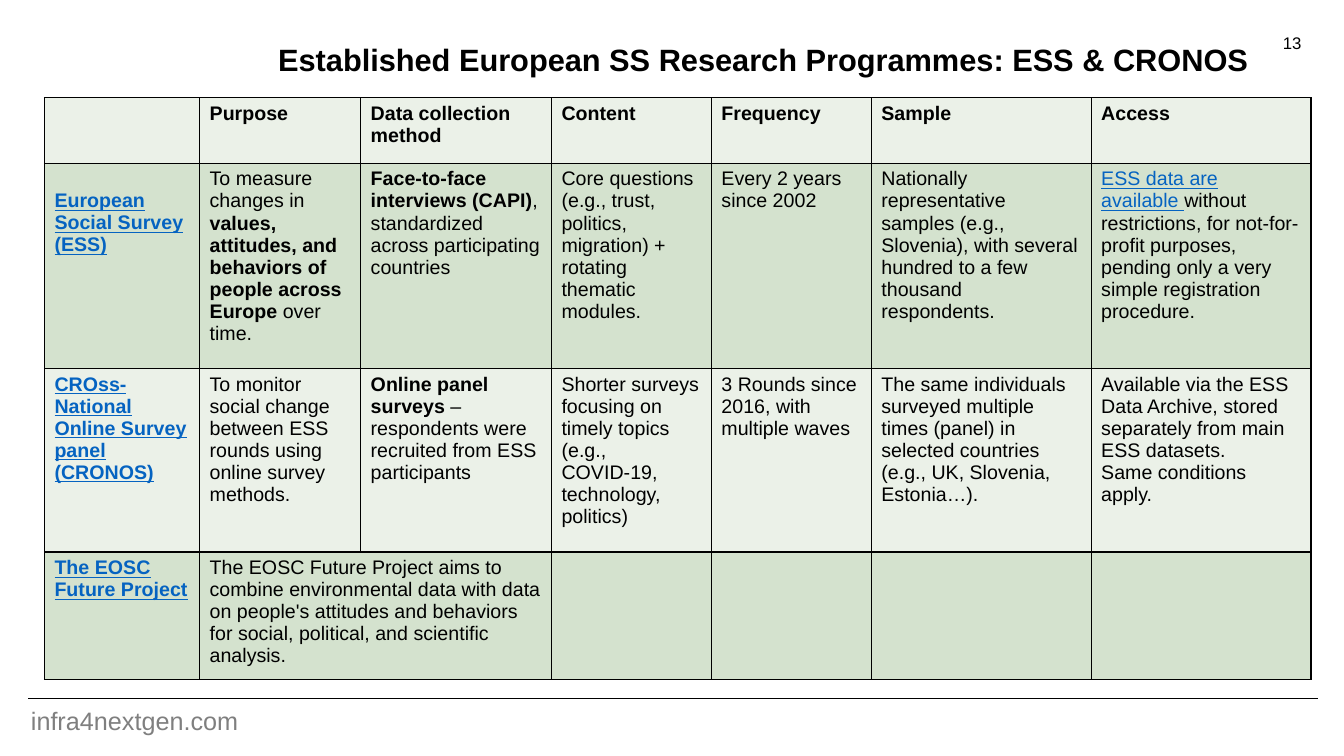
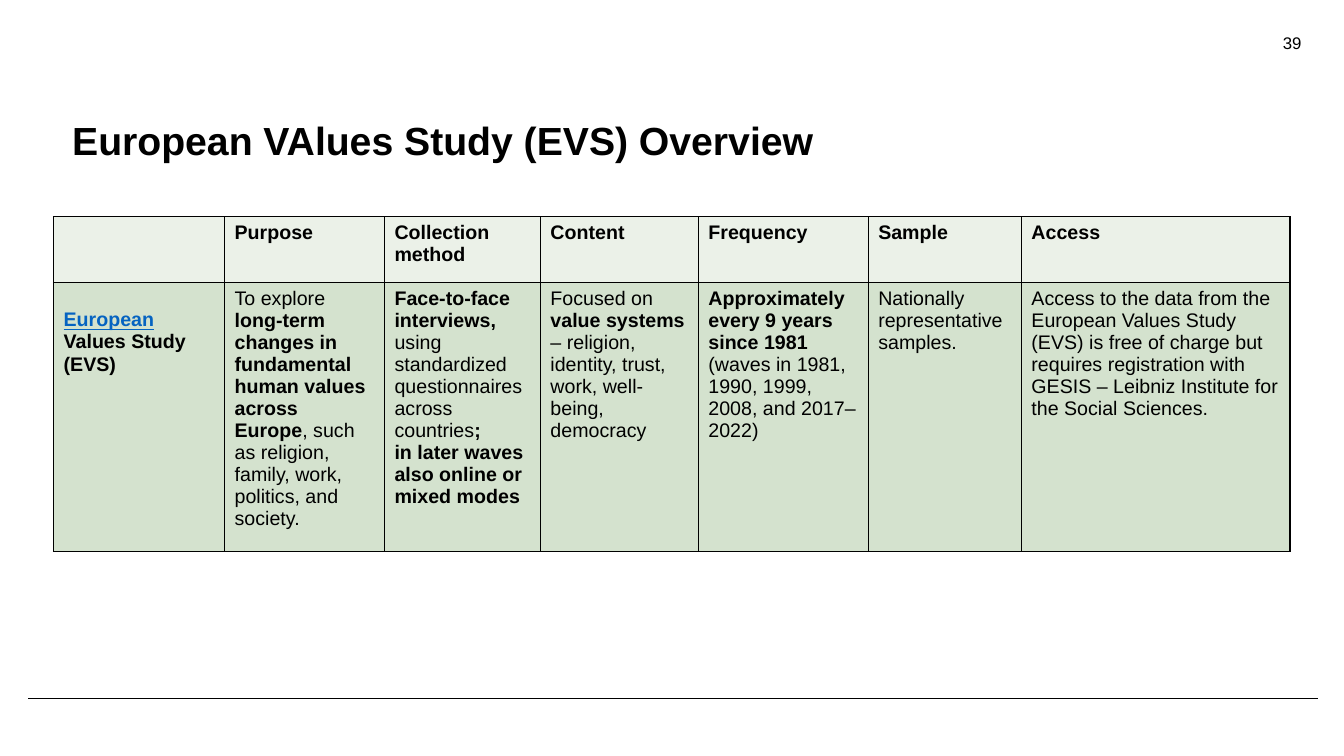
from lxml.etree import SubElement as Sub
from pptx import Presentation
from pptx.dml.color import RGBColor as Rgb
from pptx.enum.shapes import MSO_CONNECTOR as Link
from pptx.enum.text import MSO_ANCHOR as Anchor, PP_ALIGN as Align
from pptx.oxml.ns import qn
from pptx.util import Cm, Pt

HUES = {
    "ink": "000000",
    "link": "0563C1",
    "grey": "7F7F7F",
    "pale": "EBF1E8",
    "green": "D4E2CE",
}
FONT = "Arial"
# Leading mark of a text piece: (bold, link)
MARKS = {"*": (True, False), "@": (False, True), "#": (True, True)}


class Deck:
    """Holds the style and the current slide."""

    def __init__(self):
        self.prs = Presentation()
        self.prs.slide_width, self.prs.slide_height = Cm(33.87), Cm(19.05)
        self.slide = None

    def page(self, num):
        """New slide with its number and the rule at the foot."""
        self.slide = self.prs.slides.add_slide(self.prs.slide_layouts[6])
        rule = self.slide.shapes.add_connector(
            Link.STRAIGHT, Cm(0.71), Cm(17.6), Cm(33.22), Cm(17.6))
        rule.line.color.rgb = Rgb.from_string(HUES["ink"])
        rule.line.width = Pt(0.75)
        Sub(rule._element.spPr, qn("a:effectLst"))
        self.text(str(num), 25.43, 0.69, 7.62, 1.02, 12, align=Align.RIGHT)

    def style(self, run, size, hue="ink", bold=False, line=False):
        font = run.font
        font.name, font.size, font.bold = FONT, Pt(size), bold
        font.underline = line
        font.color.rgb = Rgb.from_string(HUES[hue])

    def text(self, words, x, y, w, h, size, hue="ink", bold=False,
             align=Align.LEFT, space=1.0):
        box = self.slide.shapes.add_textbox(Cm(x), Cm(y), Cm(w), Cm(h))
        frame = box.text_frame
        frame.word_wrap = True
        frame.vertical_anchor = Anchor.TOP
        frame.text = words
        para = frame.paragraphs[0]
        para.alignment, para.line_spacing = align, space
        self.style(para.runs[0], size, hue, bold)

    def title(self, words, x, y, w, h, size):
        self.text(words, x, y, w, h, size, bold=True, space=0.9)

    def edge(self, cell):
        """Thin black border on all four sides."""
        props = cell._tc.get_or_add_tcPr()
        for side in ("lnL", "lnR", "lnT", "lnB"):
            line = Sub(props, qn("a:" + side), w=str(Pt(1)))
            fill = Sub(line, qn("a:solidFill"))
            Sub(fill, qn("a:srgbClr"), val=HUES["ink"])

    def fill(self, cell, words, hue):
        """Colour a cell and write its marked pieces, split by bars."""
        self.edge(cell)
        cell.fill.solid()
        cell.fill.fore_color.rgb = Rgb.from_string(HUES[hue])
        if not words:
            return
        frame = cell.text_frame
        for i, row in enumerate(words.split("\n")):
            para = frame.add_paragraph() if i else frame.paragraphs[0]
            for piece in row.split("|"):
                bold, link = MARKS.get(piece[0], (False, False))
                run = para.add_run()
                run.text = piece[1:] if piece[0] in MARKS else piece
                self.style(run, 14, "link" if link else "ink", bold, link)

    def grid(self, x, y, cols, tall, rows):
        """Table with pale and green rows in turn."""
        table = self.slide.shapes.add_table(
            len(rows), len(cols), Cm(x), Cm(y),
            Cm(sum(cols)), Cm(sum(tall))).table
        table.first_row = table.horz_banding = False
        for col, wide in zip(table.columns, cols):
            col.width = Cm(wide)
        for r, row in enumerate(rows):
            table.rows[r].height = Cm(tall[r])
            for c, words in enumerate(row):
                hue = "green" if r % 2 else "pale"
                self.fill(table.cell(r, c), words, hue)
        # The first survey name starts one line lower
        table.cell(1, 0).margin_top = Cm(0.68)
        return table


def heads(method):
    names = ("Purpose", method, "Content", "Frequency", "Sample", "Access")
    return [""] + ["*" + name for name in names]


def main():
    deck = Deck()

    # ESS and CRONOS
    deck.page(13)
    deck.title("Established European SS Research Programmes: ESS & CRONOS",
               6.76, 1.02, 25.9, 1.2, 22)
    table = deck.grid(
        1.12, 2.46, [3.91, 4.06, 4.81, 4.03, 4.03, 5.54, 5.54],
        [1.65, 5.18, 4.62, 3.02],
        [
            heads("Data collection method"),
            [
                "#European Social Survey (ESS)",
                "To measure changes in |*values, attitudes, and behaviors "
                "of people across Europe| over time.",
                "*Face-to-face interviews (CAPI)|, standardized across "
                "participating countries",
                "Core questions (e.g., trust, politics, migration) + "
                "rotating thematic modules.",
                "Every 2 years since 2002",
                "Nationally representative samples (e.g., Slovenia), with "
                "several hundred to a few thousand respondents.",
                "@ESS data are available |without restrictions, for "
                "not-for-profit purposes, pending only a very simple "
                "registration procedure.",
            ],
            [
                "#CROss-National Online Survey panel (CRONOS)",
                "To monitor social change between ESS rounds using online "
                "survey methods.",
                "*Online panel surveys| – respondents were recruited from "
                "ESS participants",
                "Shorter surveys focusing on timely topics (e.g., COVID-19, "
                "technology, politics)",
                "3 Rounds since 2016, with multiple waves",
                "The same individuals surveyed multiple times (panel) in "
                "selected countries (e.g., UK, Slovenia, Estonia…).",
                "Available via the ESS Data Archive, stored separately from "
                "main ESS datasets.\nSame conditions apply.",
            ],
            [
                "#The EOSC Future Project",
                "The EOSC Future Project aims to combine environmental data "
                "with data on people's attitudes and behaviors for social, "
                "political, and scientific analysis.",
                "", "", "", "", "",
            ],
        ])
    table.cell(3, 1).merge(table.cell(3, 2))
    deck.text("infra4nextgen.com", 0.53, 17.65, 11.43, 1.02, 18, "grey")

    # EVS
    deck.page(39)
    deck.title("European VAlues Study (EVS) Overview",
               1.57, 2.95, 22.63, 1.5, 28)
    deck.grid(
        1.35, 5.46, [4.31, 4.03, 3.93, 3.98, 4.28, 3.86, 6.77],
        [1.65, 6.35],
        [
            heads("Collection method"),
            [
                "#European |*Values Study\n*(EVS)",
                "To explore |*long-term changes in fundamental human values "
                "across Europe|, such as religion, family, work, politics, "
                "and society.",
                "*Face-to-face interviews, |using standardized "
                "questionnaires across countries|*;\n*in later waves also "
                "online or mixed modes",
                "Focused on |*value systems |– religion, identity, trust, "
                "work, well-being, democracy",
                "*Approximately every 9 years since 1981 |(waves in 1981, "
                "1990, 1999, 2008, and 2017–2022)",
                "Nationally representative samples.",
                "Access to the data from the European Values Study (EVS) is "
                "free of charge but requires registration with GESIS – "
                "Leibniz Institute for the Social Sciences.",
            ],
        ])

    deck.prs.save("out.pptx")


if __name__ == "__main__":
    main()
